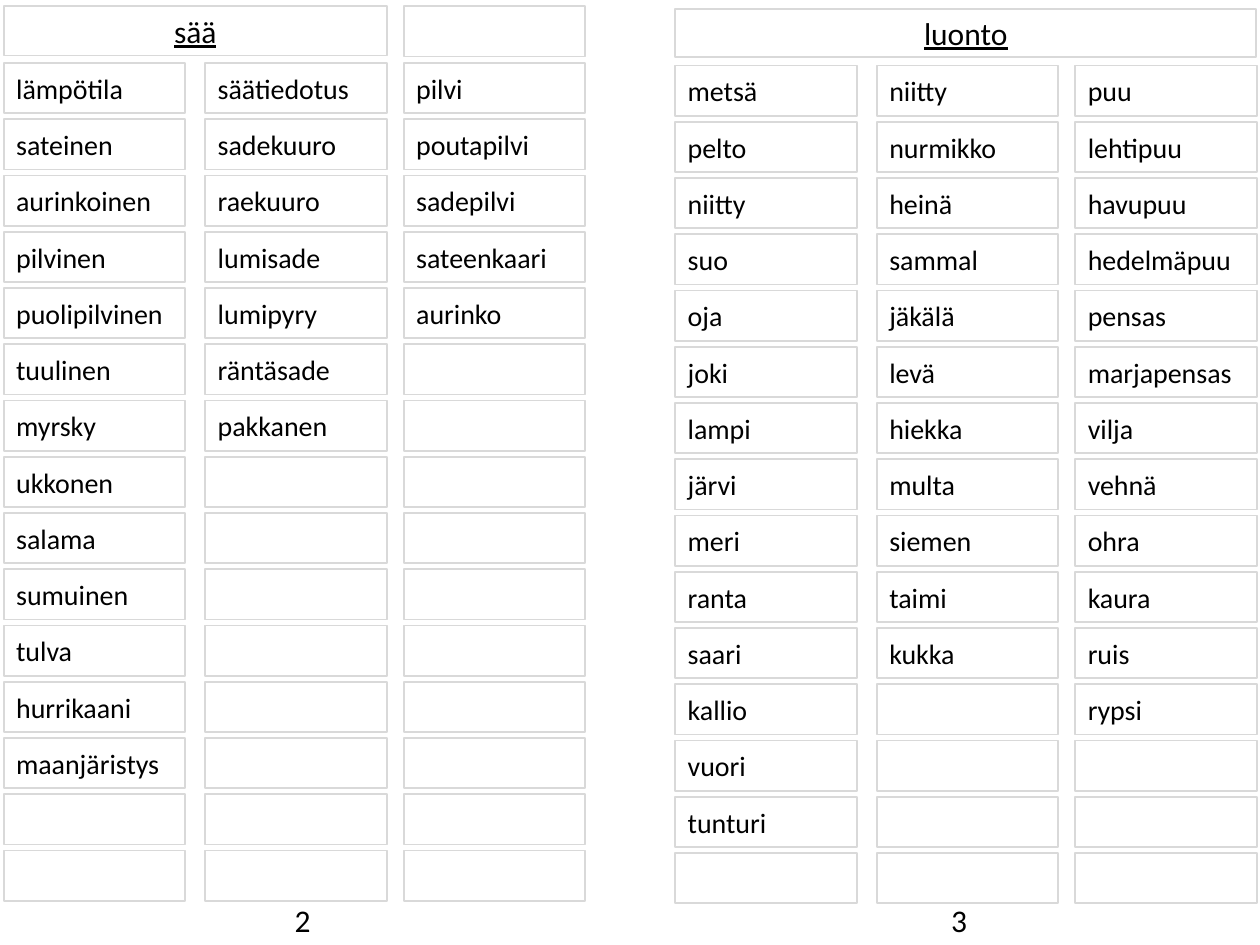
from pptx import Presentation
from pptx.dml.color import RGBColor
from pptx.enum.shapes import MSO_SHAPE
from pptx.enum.text import MSO_ANCHOR as ANCHOR, MSO_AUTO_SIZE as AUTO, PP_ALIGN as ALIGN
from pptx.util import Inches, Pt

FONT, INK, BORDER = "Calibri", "000000", "D9D9D9"
ROWS, CARD_W, CARD_H = 15, 1.44, 0.4
ROW_PITCH = 6.25 / (ROWS - 1)
COLUMN_OFFSETS = (0, 1.6, 3.175)

WEATHER = (
    "lämpötila sateinen aurinkoinen pilvinen puolipilvinen tuulinen myrsky "
    "ukkonen salama sumuinen tulva hurrikaani maanjäristys",
    "säätiedotus sadekuuro raekuuro lumisade lumipyry räntäsade pakkanen",
    "pilvi poutapilvi sadepilvi sateenkaari aurinko",
)
NATURE = (
    "metsä pelto niitty suo oja joki lampi järvi meri ranta saari kallio vuori tunturi",
    "niitty nurmikko heinä sammal jäkälä levä hiekka multa siemen taimi kukka",
    "puu lehtipuu havupuu hedelmäpuu pensas marjapensas vilja vehnä ohra kaura ruis rypsi",
)


def color(hex_code):
    """Return the colour for a hex string."""
    return RGBColor.from_string(hex_code)


def place(s, left, top, width, height):
    """Move and size a shape, in inches."""
    s.left, s.top, s.width, s.height = map(Inches, (left, top, width, height))


def write(s, text, size, align=ALIGN.LEFT, underline=None):
    """Set the text of a shape and its font."""
    tf = s.text_frame
    tf.word_wrap = True
    tf.vertical_anchor = ANCHOR.MIDDLE
    p = tf.paragraphs[0]
    p.text = text
    p.alignment = align
    p.font.name, p.font.size = FONT, Pt(size)
    p.font.color.rgb = color(INK)
    p.font.underline = underline


def outline(s):
    """Give a shape the thin grey border and no fill."""
    s.fill.background()
    s.line.color.rgb = color(BORDER)
    s.line.width = Pt(1)


def add_card(slide, left, top, width=CARD_W, height=CARD_H, text=""):
    """Add a bordered card, with a word if one is given."""
    s = slide.shapes.add_shape(MSO_SHAPE.RECTANGLE, 0, 0, 0, 0)
    place(s, left, top, width, height)
    s.shadow.inherit = False
    outline(s)
    if text:
        write(s, text, 16)
    return s


def add_word_grid(slide, left, top, columns):
    """Add three columns of word cards, blank below the last word."""
    for offset, words in zip(COLUMN_OFFSETS, columns):
        words = words.split()
        words += [""] * (ROWS - len(words))
        for row, word in enumerate(words):
            add_card(slide, left + offset, top + row * ROW_PITCH, text=word)


def format_heading(s, text, left, top, width, height):
    """Place and format the heading of a page."""
    place(s, left, top, width, height)
    outline(s)
    write(s, text, 18, ALIGN.CENTER, True)
    s.text_frame.auto_size = AUTO.NONE


def add_page_number(slide, number, left, top, width):
    """Add the number at the foot of a page."""
    s = slide.shapes.add_textbox(0, 0, 0, 0)
    place(s, left, top, width, 0.4)
    write(s, number, 18)
    s.text_frame.vertical_anchor = ANCHOR.TOP


def add_weather_page(slide, left, top):
    """Build the left page, headed by the slide title."""
    format_heading(slide.shapes.title, "sää", left, top, 3.04, 0.39)
    add_card(slide, left + COLUMN_OFFSETS[2], top)
    add_word_grid(slide, left, top + 0.45, WEATHER)
    add_page_number(slide, "2", left + 2.21, top + 7.05, 0.34)


def add_nature_page(slide, left, top):
    """Build the right page."""
    format_heading(add_card(slide, left, top), "luonto", left, top, 4.61, 0.38)
    add_word_grid(slide, left, top + 0.45, NATURE)
    add_page_number(slide, "3", left + 2.09, top + 7.03, 0.43)


def main():
    """Build the slide and save it."""
    prs = Presentation()
    prs.slide_width, prs.slide_height = Inches(10), Inches(7.5)
    slide = prs.slides.add_slide(prs.slide_layouts[5])
    add_weather_page(slide, 0.03, 0.05)
    add_nature_page(slide, 5.36, 0.07)
    prs.save("out.pptx")


if __name__ == "__main__":
    main()
